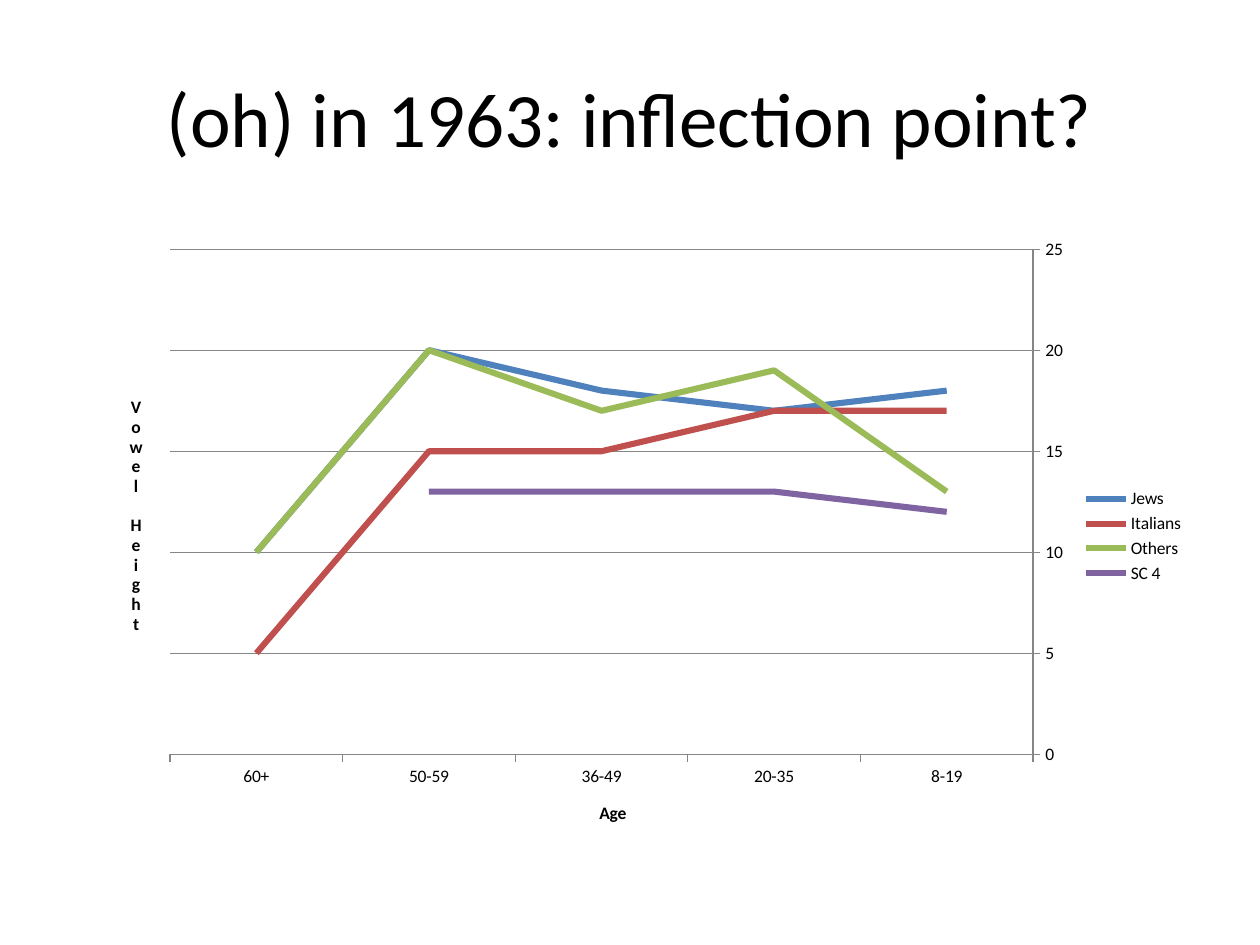
from lxml.etree import SubElement
from pptx import Presentation
from pptx.chart.data import CategoryChartData
from pptx.dml.color import RGBColor
from pptx.enum.chart import XL_CHART_TYPE as ChartType
from pptx.enum.chart import XL_LEGEND_POSITION as LegendPosition
from pptx.enum.chart import XL_TICK_MARK as TickMark
from pptx.enum.text import MSO_ANCHOR as Anchor
from pptx.enum.text import PP_ALIGN as Align
from pptx.oxml.ns import qn
from pptx.util import Inches, Pt

FONT = "Calibri"
BLACK = RGBColor(0x00, 0x00, 0x00)
GRAY = RGBColor(0x86, 0x86, 0x86)
BLUE = RGBColor(0x4F, 0x81, 0xBD)
RED = RGBColor(0xC0, 0x50, 0x4D)
GREEN = RGBColor(0x9B, 0xBB, 0x59)
PURPLE = RGBColor(0x80, 0x64, 0xA2)

AGE_GROUPS = ["8-19", "20-35", "36-49", "50-59", "60+"]
SPEAKER_GROUPS = [
    ("Jews", [18, 17, 18, 20, 10], BLUE),
    ("Italians", [17, 17, 15, 15, 5], RED),
    ("Others", [13, 19, 17, 20, 10], GREEN),
    ("SC 4", [12, 13, 13, 13, None], PURPLE),
]


def format_font(font, size, bold=False, color=BLACK):
    """Set the typeface, size, weight and colour of a font."""
    font.name = FONT
    font.size = Pt(size)
    font.bold = bold
    font.color.rgb = color


def write_text(text_frame, text, size, bold=False, color=BLACK, align=Align.CENTER):
    """Fill a text frame with one formatted paragraph."""
    paragraph = text_frame.paragraphs[0]
    paragraph.alignment = align
    run = paragraph.add_run()
    run.text = text
    format_font(run.font, size, bold, color)


def place_part(element, index, **shares):
    """Fix a chart part at shares of the chart's size."""
    for old_layout in element.findall(qn("c:layout")):
        element.remove(old_layout)
    layout = SubElement(element, qn("c:layout"))
    manual = SubElement(layout, qn("c:manualLayout"))
    if "w" in shares:
        SubElement(manual, qn("c:layoutTarget"), val="inner")
    for name in ("x", "y"):
        SubElement(manual, qn(f"c:{name}Mode"), val="edge")
    for name, share in shares.items():
        SubElement(manual, qn(f"c:{name}"), val=str(share))
    element.insert(index, layout)


def format_axis(axis, title, x, y):
    """Style an axis and place its title."""
    axis.major_tick_mark = TickMark.OUTSIDE
    axis.minor_tick_mark = TickMark.NONE
    axis.format.line.color.rgb = GRAY
    axis.format.line.width = Pt(0.75)
    format_font(axis.tick_labels.font, 10)
    write_text(axis.axis_title.text_frame, title, 10, bold=True)
    place_part(axis.axis_title._element, 1, x=x, y=y)


def add_title(slide, text):
    """Place and fill the title placeholder."""
    title = slide.shapes.title
    title.left, title.top = Inches(0.5), Inches(0.3)
    title.width, title.height = Inches(9), Inches(1.25)
    title.text_frame.vertical_anchor = Anchor.MIDDLE
    write_text(title.text_frame, text, 44)


def add_vowel_chart(slide):
    """Add the line chart of vowel height by age."""
    data = CategoryChartData()
    data.categories = AGE_GROUPS
    for name, values, _ in SPEAKER_GROUPS:
        data.add_series(name, values)
    chart = slide.shapes.add_chart(
        ChartType.LINE, Inches(0.83), Inches(1.78), Inches(8.67), Inches(4.95), data
    ).chart
    format_font(chart.font, 10)
    chart.has_title = False
    chart.has_legend = True
    chart.legend.position = LegendPosition.RIGHT
    chart.legend.include_in_layout = False
    format_font(chart.legend.font, 10)
    chart.plots[0].vary_by_categories = False
    for series, (_, _, color) in zip(chart.plots[0].series, SPEAKER_GROUPS):
        series.smooth = False
        series.format.line.color.rgb = color
        series.format.line.width = Pt(3.5)

    chart.category_axis.reverse_order = True
    format_axis(chart.category_axis, "Age", x=0.45, y=0.92)
    value_axis = chart.value_axis
    value_axis.minimum_scale, value_axis.maximum_scale = 0, 25
    value_axis.major_unit = 5
    value_axis.has_major_gridlines = True
    gridline = value_axis.major_gridlines.format.line
    gridline.color.rgb = GRAY
    gridline.width = Pt(0.75)
    format_axis(value_axis, "Vowel Height", x=0.02, y=0.27)
    body = value_axis.axis_title.text_frame._txBody.find(qn("a:bodyPr"))
    body.set("rot", "0")
    body.set("vert", "wordArtVert")
    plot_area = chart._chartSpace.chart.plotArea
    place_part(plot_area, 0, x=0.06, y=0.04, w=0.79, h=0.81)


def main():
    """Build and save the slide."""
    presentation = Presentation()
    presentation.slide_width, presentation.slide_height = Inches(10), Inches(7.5)
    slide = presentation.slides.add_slide(presentation.slide_layouts[5])
    add_title(slide, "(oh) in 1963: inflection point?")
    add_vowel_chart(slide)
    presentation.save("out.pptx")


if __name__ == "__main__":
    main()
